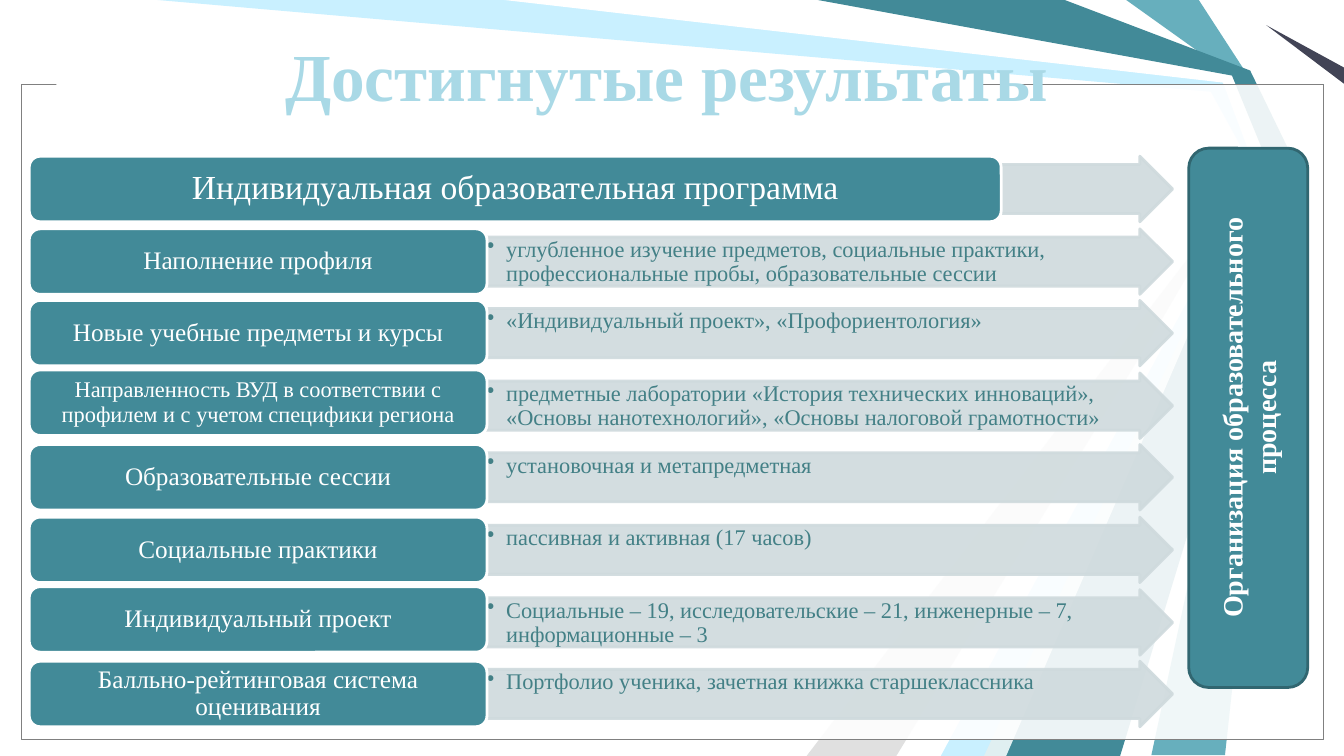
import dataclasses

import lxml.etree
import pptx
import pptx.dml.color
import pptx.enum.shapes
import pptx.enum.text
import pptx.oxml.ns
import pptx.util

PX = 9144  # EMU in one px, 100 px to the inch
SHAPES = pptx.enum.shapes.MSO_SHAPE
ALIGN = pptx.enum.text.PP_ALIGN
ANCHOR = pptx.enum.text.MSO_ANCHOR


@dataclasses.dataclass(frozen=True)
class Theme:
    font: str = "Times New Roman"
    white: str = "FFFFFF"
    teal: str = "428A98"
    dark_teal: str = "316670"
    light_teal: str = "67AFBD"
    mist: str = "E0EFF1"
    sky: str = "C9F0FF"
    grey: str = "E0E0E0"
    navy: str = "424456"
    arrow: str = "CFDADD"
    detail: str = "438086"
    title: str = "A9D9E6"
    frame: str = "808080"
    frame_under: str = "0084B4"
    title_size: int = 48
    header_size: int = 24
    panel_size: int = 20
    label_size: int = 18
    detail_size: int = 16


THEME = Theme()

# Background rays: colour and corner points in px
RAYS = [
    (THEME.light_teal, [(1189, 0), (1239, 77), (1278, 167), (1215, 749), (1142, 749),
                        (1267, 167), (1222, 75), (1117, 0)]),
    (THEME.sky, [(156, 0), (511, 0), (1218, 78), (1256, 169), (989, 750), (922, 750),
                 (1246, 173), (1201, 91)]),
    (THEME.grey, [(889, 750), (1236, 181), (800, 750)]),
    (THEME.white, [(500, 0), (1213, 82), (1243, 162), (900, 750), (933, 750),
                   (1254, 158), (1222, 75), (800, 0)]),
    (THEME.white, [(1233, 0), (1222, 17), (1304, 120), (1333, 125), (1333, 100),
                   (1233, 17), (1243, 0)]),
    (THEME.navy, [(1333, 83), (1256, 25), (1333, 67)]),
    (THEME.teal, [(811, 0), (1056, 0), (1240, 70), (1288, 169), (1111, 750), (978, 750),
                  (1256, 158), (1222, 75)]),
    (THEME.mist, [(976, 750), (1243, 183), (998, 750)]),
]

# Result rows: label, label size, upward shift of the label in px, detail
RESULTS = [
    ("Наполнение профиля", THEME.label_size, 0,
     "углубленное изучение предметов, социальные практики, "
     "профессиональные пробы, образовательные сессии"),
    ("Новые учебные предметы и курсы", THEME.label_size, 0,
     "«Индивидуальный проект», «Профориентология»"),
    ("Направленность ВУД в соответствии с профилем и с учетом специфики региона",
     THEME.detail_size, 3,
     "предметные лаборатории «История технических инноваций», "
     "«Основы нанотехнологий», «Основы налоговой грамотности»"),
    ("Образовательные сессии", THEME.label_size, 0, "установочная и метапредметная"),
    ("Социальные практики", THEME.label_size, 0, "пассивная и активная (17 часов)"),
    ("Индивидуальный проект", THEME.label_size, 3,
     "Социальные – 19, исследовательские – 21, инженерные – 7, информационные – 3"),
    ("Балльно-рейтинговая система оценивания", THEME.label_size, 0,
     "Портфолио ученика, зачетная книжка старшеклассника"),
]

ROW_TOP, ROW_PITCH, ROW_HEIGHT = 155, 71.6, 65
LABEL_LEFT, ARROW_RIGHT = 29, 1163
HEADER_SPLIT, ROW_SPLIT = 993, 482


def rgb(colour):
    return pptx.dml.color.RGBColor.from_string(colour)


def set_opacity(shape, percent):
    """Apply an opacity to every colour the shape has so far."""
    for colour in shape.element.spPr.iter(pptx.oxml.ns.qn("a:srgbClr")):
        alpha = lxml.etree.SubElement(colour, pptx.oxml.ns.qn("a:alpha"))
        alpha.set("val", str(percent * 1000))


def paint(shape, fill, line=None, line_width=2, fill_opacity=None):
    shape.shadow.inherit = False
    shape.fill.solid()
    shape.fill.fore_color.rgb = rgb(fill)
    if fill_opacity:
        set_opacity(shape, fill_opacity)
    if line:
        shape.line.color.rgb = rgb(line)
        shape.line.width = pptx.util.Pt(line_width)
    else:
        shape.line.fill.background()


def add_box(slide, kind, left, top, width, height, **style):
    shape = slide.shapes.add_shape(kind, left * PX, top * PX, width * PX, height * PX)
    paint(shape, **style)
    return shape


def write(shape, text, size, colour, insets=(10, 5), bold=False, align=ALIGN.CENTER,
          anchor=ANCHOR.MIDDLE, spacing=None, bullet=False):
    frame = shape.text_frame
    frame.word_wrap = True
    frame.vertical_anchor = anchor
    frame.margin_left = frame.margin_right = insets[0] * PX
    frame.margin_top = frame.margin_bottom = insets[1] * PX
    frame.text = text
    paragraph = frame.paragraphs[0]
    paragraph.alignment = align
    if spacing:
        paragraph.line_spacing = spacing
    if bullet:
        properties = paragraph._p.get_or_add_pPr()
        properties.set("marL", str(19 * PX))
        properties.set("indent", str(-19 * PX))
        mark = lxml.etree.SubElement(properties, pptx.oxml.ns.qn("a:buChar"))
        mark.set("char", "•")
    font = paragraph.runs[0].font
    font.name, font.size, font.bold = THEME.font, pptx.util.Pt(size), bold
    font.color.rgb = rgb(colour)


def add_ray(slide, colour, points):
    builder = slide.shapes.build_freeform(*points[0], scale=PX)
    builder.add_line_segments(points[1:], close=True)
    paint(builder.convert_to_shape(), colour)


def add_arrow(slide, left, top):
    arrow = add_box(slide, SHAPES.RIGHT_ARROW, left, top, ARROW_RIGHT - left, ROW_HEIGHT,
                    fill=THEME.arrow, line=THEME.arrow)
    arrow.adjustments[0] = 0.75
    set_opacity(arrow, 90)
    return arrow


def add_label(slide, text, size, right, top, insets):
    label = add_box(slide, SHAPES.ROUNDED_RECTANGLE, LABEL_LEFT, top, right - LABEL_LEFT,
                    ROW_HEIGHT, fill=THEME.teal, line=THEME.white)
    write(label, text, size, THEME.white, insets, spacing=0.9)


def add_result(slide, top, label, size, shift, detail):
    arrow = add_arrow(slide, ROW_SPLIT, top)
    write(arrow, detail, THEME.detail_size, THEME.detail, insets=(1, 1), align=ALIGN.LEFT,
          anchor=ANCHOR.TOP, spacing=0.9, bullet=True)
    add_label(slide, label, size, ROW_SPLIT + 1, top - shift, insets=(7, 4))


def main():
    presentation = pptx.Presentation()
    presentation.slide_width, presentation.slide_height = 1333 * PX, 750 * PX
    slide = presentation.slides.add_slide(presentation.slide_layouts[6])

    # Background rays and frame
    for colour, points in RAYS:
        add_ray(slide, colour, points)
    for line in (THEME.frame_under, THEME.frame):
        add_box(slide, SHAPES.RECTANGLE, 21, 84, 1292, 650, fill=THEME.white, line=line,
                line_width=0.75, fill_opacity=69)
    add_box(slide, SHAPES.RECTANGLE, 56, 74, 911, 17, fill=THEME.white)

    # Programme header and result rows
    add_arrow(slide, HEADER_SPLIT, ROW_TOP)
    add_label(slide, "Индивидуальная образовательная программа", THEME.header_size,
              HEADER_SPLIT, ROW_TOP, insets=(10, 5))
    for number, result in enumerate(RESULTS, start=1):
        add_result(slide, ROW_TOP + round(number * ROW_PITCH), *result)

    # Side panel with upward text
    panel = add_box(slide, SHAPES.ROUNDED_RECTANGLE, 1179, 147, 118, 535,
                    fill=THEME.teal, line=THEME.dark_teal)
    write(panel, "Организация образовательного процесса", THEME.panel_size, THEME.white,
          bold=True)
    panel.element.txBody.bodyPr.set("vert", "vert270")

    # Title
    title = slide.shapes.add_textbox(273 * PX, 29 * PX, 835 * PX, 91 * PX)
    write(title, "Достигнутые результаты", THEME.title_size, THEME.title, bold=True,
          align=ALIGN.LEFT, anchor=ANCHOR.TOP)

    presentation.save("out.pptx")


if __name__ == "__main__":
    main()
